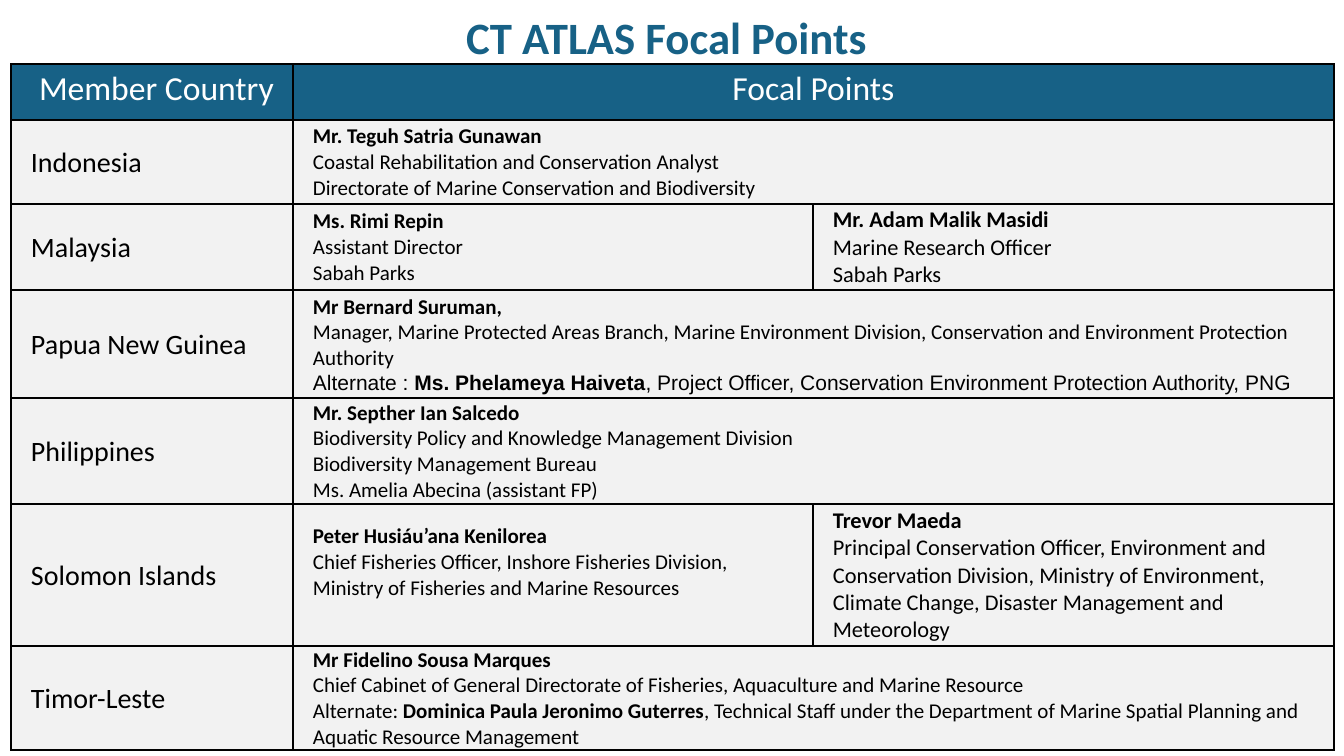
from lxml.etree import SubElement
from pptx import Presentation
from pptx.dml.color import RGBColor
from pptx.enum.text import MSO_ANCHOR as Anchor, PP_ALIGN as Align
from pptx.oxml.ns import qn
from pptx.util import Pt

PX = 914400 / 100.8
COLORS = {"blue": "176186", "grey": "F2F2F2", "black": "000000", "white": "FFFFFF"}


def px(length):
    return round(length * PX)


def write(holder, text, size=15, color="black", font="Calibri", align=Align.LEFT,
          anchor=Anchor.MIDDLE, margins=(20, 1, 30, 0)):
    """Append paragraphs split at \\n; \\v breaks a line and ** toggles bold.

    The holder is a table cell or the text frame of a box.
    """
    frame = getattr(holder, "text_frame", holder)
    frame.word_wrap = True
    holder.vertical_anchor = anchor
    (holder.margin_left, holder.margin_top,
     holder.margin_right, holder.margin_bottom) = map(px, margins)
    for line in text.split("\n"):
        para = frame.add_paragraph() if frame.text else frame.paragraphs[0]
        para.alignment = align
        for index, part in enumerate(line.split("**")):
            for order, piece in enumerate(part.split("\v")):
                if order:
                    para.add_line_break()
                if piece:
                    span = para.add_run()
                    span.text = piece
                    span.font.size = Pt(size)
                    span.font.name = font
                    span.font.bold = index % 2 == 1
                    span.font.color.rgb = RGBColor.from_string(COLORS[color])


COUNTRIES = [
    ("Indonesia",
     "**Mr. Teguh Satria Gunawan**\n"
     "Coastal Rehabilitation and Conservation Analyst\v"
     "Directorate of Marine Conservation and Biodiversity", None),
    ("Malaysia",
     "**Ms. Rimi Repin**\nAssistant Director\vSabah Parks",
     "**Mr. Adam Malik Masidi**\nMarine Research Officer\vSabah Parks"),
    ("Papua New Guinea",
     "**Mr Bernard Suruman,**\n"
     "Manager, Marine Protected Areas Branch, Marine Environment Division, "
     "Conservation and Environment Protection Authority", None),
    ("Philippines",
     "**Mr. Septher Ian Salcedo**\n"
     "Biodiversity Policy and Knowledge Management Division\n"
     "Biodiversity Management Bureau\n"
     "Ms. Amelia Abecina (assistant FP)", None),
    ("Solomon Islands",
     "**Peter Husiáu’ana Kenilorea**\n"
     "Chief Fisheries Officer, Inshore Fisheries Division, "
     "Ministry of Fisheries and Marine Resources",
     "**Trevor Maeda**\n"
     "Principal Conservation Officer, Environment and Conservation Division, "
     "Ministry of Environment, Climate Change, Disaster Management and Meteorology"),
    ("Timor-Leste",
     "**Mr Fidelino Sousa Marques**\n"
     "Chief Cabinet of General Directorate of Fisheries, Aquaculture and Marine Resource\n"
     "Alternate: **Dominica Paula Jeronimo Guterres**, Technical Staff under the "
     "Department of Marine Spatial Planning and Aquatic Resource Management", None),
]
COLUMN_WIDTHS = [282, 520, 521]
ROW_HEIGHTS = [56, 84, 86, 108, 106, 142, 104]

deck = Presentation()
deck.slide_width, deck.slide_height = px(1344), px(756)
page = deck.slides.add_slide(deck.slide_layouts[6])

title = page.shapes.add_textbox(px(124), px(5), px(1097), px(64))
write(title.text_frame, "**CT ATLAS Focal Points**", size=32, color="blue",
      align=Align.CENTER, anchor=Anchor.TOP, margins=(10, 5, 22, 5))

table = page.shapes.add_table(
    len(ROW_HEIGHTS), len(COLUMN_WIDTHS), px(11), px(64),
    px(sum(COLUMN_WIDTHS)), px(sum(ROW_HEIGHTS))).table
table.first_row = table.horz_banding = False
for column, width in zip(table.columns, COLUMN_WIDTHS):
    column.width = px(width)
for index, height in enumerate(ROW_HEIGHTS):
    table.rows[index].height = px(height)
    for cell in table.rows[index].cells:
        props = cell._tc.get_or_add_tcPr()
        for side in ("a:lnL", "a:lnR", "a:lnT", "a:lnB"):
            line = SubElement(props, qn(side), w=str(Pt(1)))
            paint = SubElement(line, qn("a:solidFill"))
            SubElement(paint, qn("a:srgbClr"), val=COLORS["black"])
        cell.fill.solid()
        cell.fill.fore_color.rgb = RGBColor.from_string(COLORS["grey" if index else "blue"])

table.cell(0, 1).merge(table.cell(0, 2))
for column, (heading, left) in enumerate([("Member Country", 19), ("Focal Points", 10)]):
    write(table.cell(0, column), heading, size=24, color="white",
          align=Align.CENTER, anchor=Anchor.TOP, margins=(left, 5, 10, 5))

for row, (country, contact, second) in enumerate(COUNTRIES, start=1):
    write(table.cell(row, 0), country, size=20)
    write(table.cell(row, 1), contact)
    if second:
        write(table.cell(row, 2), second, size=16)
    else:
        table.cell(row, 1).merge(table.cell(row, 2))

write(table.cell(3, 1),
      "Alternate : **Ms. Phelameya Haiveta**, Project Officer, "
      "Conservation Environment Protection Authority, PNG", font="Arial")
table.cell(5, 1).margin_bottom = px(26)

deck.save("out.pptx")
